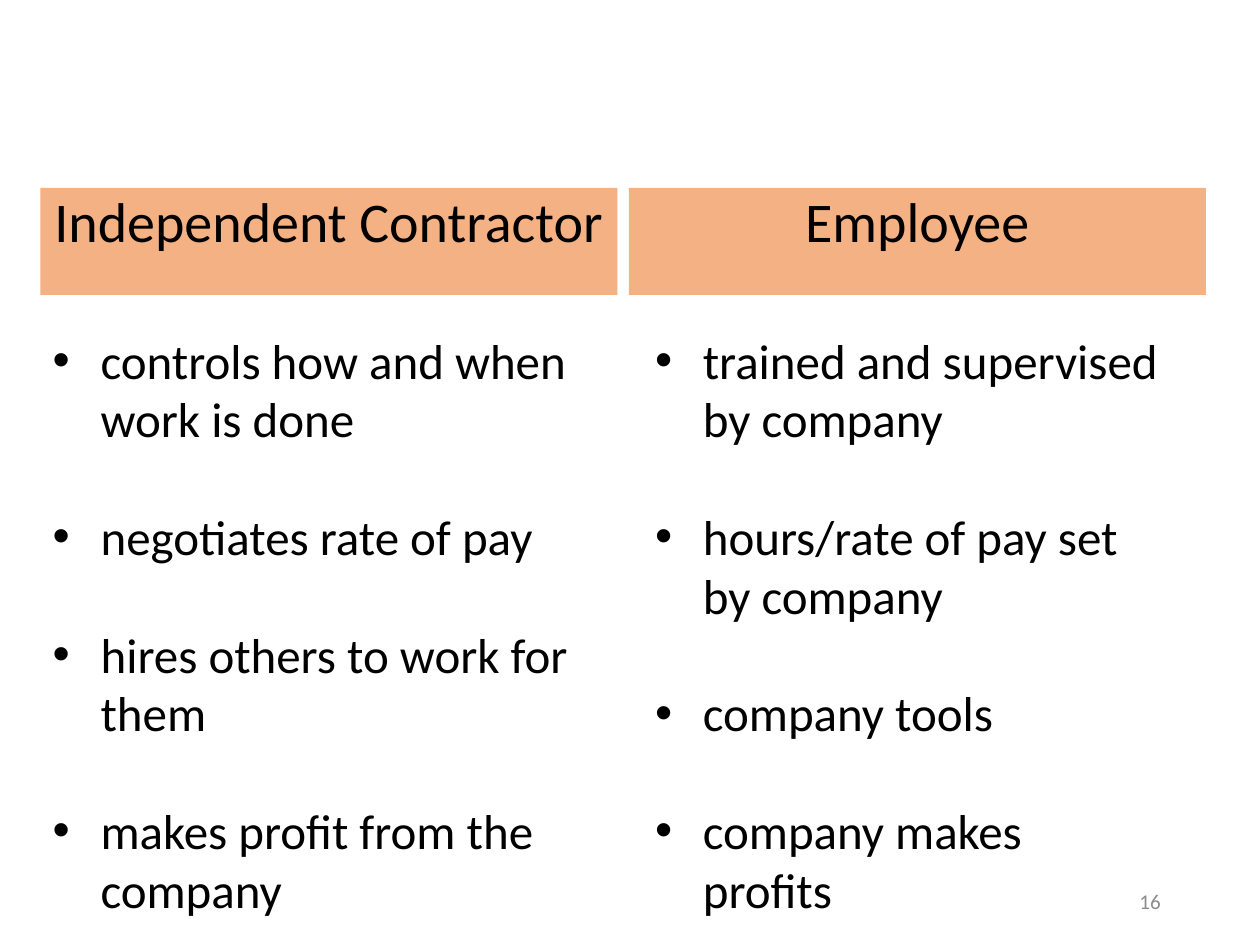
import dataclasses

import pptx
import pptx.dml.color
import pptx.enum.shapes
import pptx.enum.text
import pptx.oxml
import pptx.oxml.ns
import pptx.util

EMU_PER_PX = 9144
ALIGN = pptx.enum.text.PP_ALIGN
ANCHOR = pptx.enum.text.MSO_ANCHOR


@dataclasses.dataclass(frozen=True)
class Theme:
    """Colours and type sizes of the slide."""
    font: str = "Calibri"
    text: str = "000000"
    muted: str = "8C8C8C"
    header: str = "F4B183"
    header_size: int = 32
    body_size: int = 28
    number_size: int = 12
    bullet_gap: float = 33.6


THEME = Theme()


def px(length):
    """Turn whole px into EMU."""
    return pptx.util.Emu(length * EMU_PER_PX)


def color(value):
    """Return the colour for a hex value."""
    return pptx.dml.color.RGBColor.from_string(value)


def add_bullet(paragraph, indent):
    """Give a paragraph a round bullet with a hanging indent."""
    properties = paragraph._p.get_or_add_pPr()
    properties.set("marL", str(px(indent)))
    properties.set("indent", str(-px(indent)))
    namespace = pptx.oxml.ns.nsdecls("a")
    for element in (f'<a:buFont {namespace} typeface="Arial"/>',
                    f'<a:buChar {namespace} char="•"/>'):
        properties.append(pptx.oxml.parse_xml(element))


def write_text(shape, lines, *, size, fill=THEME.text, align=ALIGN.LEFT,
               anchor=ANCHOR.TOP, line_spacing=None, gap=0, indent=0):
    """Write one paragraph per line into a shape."""
    frame = shape.text_frame
    frame.word_wrap = True
    frame.vertical_anchor = anchor
    for index, line in enumerate(lines):
        paragraph = frame.add_paragraph() if index else frame.paragraphs[0]
        paragraph.text = line
        paragraph.alignment = align
        if line_spacing:
            paragraph.line_spacing = line_spacing
        if index and gap:
            paragraph.space_before = pptx.util.Pt(gap)
        if indent:
            add_bullet(paragraph, indent)
        paragraph.font.name = THEME.font
        paragraph.font.size = pptx.util.Pt(size)
        paragraph.font.color.rgb = color(fill)


def add_header(slide, box, title):
    """Place a filled column header in the box."""
    shape = slide.shapes.add_shape(
        pptx.enum.shapes.MSO_SHAPE.RECTANGLE, *map(px, box))
    shape.shadow.inherit = False
    shape.fill.solid()
    shape.fill.fore_color.rgb = color(THEME.header)
    shape.line.fill.background()
    write_text(shape, [title], size=THEME.header_size,
               align=ALIGN.CENTER, line_spacing=0.9)


def add_points(slide, box, points):
    """Place a bulleted list in the box."""
    shape = slide.shapes.add_textbox(*map(px, box))
    write_text(shape, points, size=THEME.body_size,
               gap=THEME.bullet_gap, indent=38)


def add_column(slide, box, title, points, list_inset, list_width):
    """Place a header with its list below inside the box."""
    left, top, width, height = box
    list_offset = 108
    add_header(slide, (left, top, width, 85), title)
    add_points(slide, (left + list_inset, top + list_offset,
                       list_width, height - list_offset), points)


def add_slide_number(slide, box, number):
    """Place the slide number in the box."""
    shape = slide.shapes.add_textbox(*map(px, box))
    write_text(shape, [number], size=THEME.number_size, fill=THEME.muted,
               align=ALIGN.RIGHT, anchor=ANCHOR.MIDDLE)


def main():
    """Build the comparison slide and save it."""
    presentation = pptx.Presentation()
    presentation.slide_width = px(1000)
    presentation.slide_height = px(750)
    slide = presentation.slides.add_slide(presentation.slide_layouts[6])
    add_slide_number(slide, (706, 695, 225, 40), "16")
    columns = [
        ("Independent Contractor", 0, 458,
         ["controls how and when work is done",
          "negotiates rate of pay",
          "hires others to work for them",
          "makes profit from the company"]),
        ("Employee", 11, 421,
         ["trained and supervised by company",
          "hours/rate of pay set by company",
          "company tools",
          "company makes profits"]),
    ]
    width, gutter = 458, 9
    for index, (title, list_inset, list_width, points) in enumerate(columns):
        box = (32 + index * (width + gutter), 149, width, 589)
        add_column(slide, box, title, points, list_inset, list_width)
    presentation.save("out.pptx")


if __name__ == "__main__":
    main()
